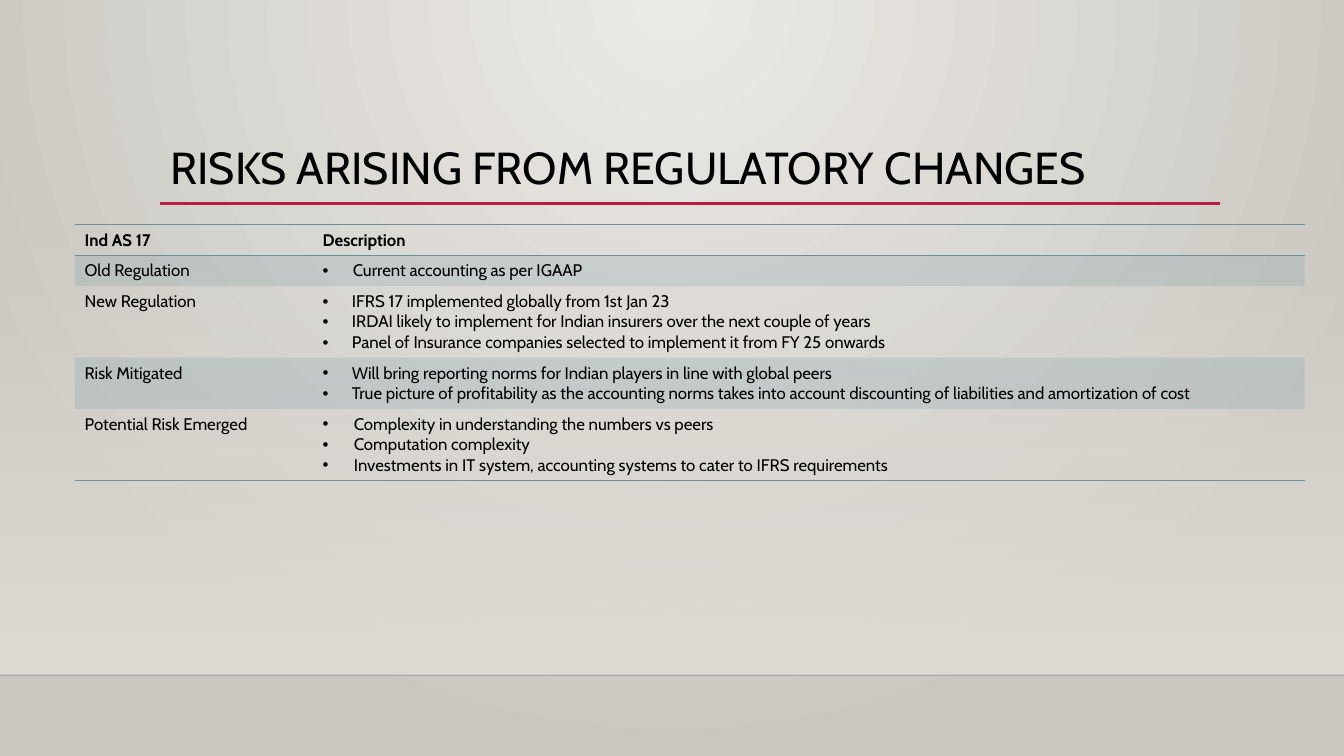
from lxml.etree import SubElement
from pptx import Presentation
from pptx.dml.color import RGBColor
from pptx.enum.shapes import MSO_CONNECTOR, MSO_SHAPE
from pptx.enum.text import MSO_ANCHOR, MSO_AUTO_SIZE, PP_ALIGN
from pptx.oxml import parse_xml
from pptx.oxml.ns import nsdecls, qn
from pptx.util import Pt

EMU_PER_PX = 9144  # 100 px to the inch
WIDTH, HEIGHT = 1333, 750
FLOOR_TOP = 670

ROWS = [
    ("Ind AS 17", ["Description"], 0),
    ("Old Regulation", ["Current accounting as per IGAAP"], 30),
    ("New Regulation", [
        "IFRS 17 implemented globally from 1st Jan 23",
        "IRDAI likely to implement for Indian insurers over the next couple of years",
        "Panel of Insurance companies selected to implement it from FY 25 onwards",
    ], 29),
    ("Risk Mitigated", [
        "Will bring reporting norms for Indian players in line with global peers",
        "True picture of profitability as the accounting norms takes into account "
        "discounting of liabilities and amortization of cost",
    ], 29),
    ("Potential Risk Emerged", [
        "Complexity in understanding the numbers vs peers",
        "Computation complexity",
        "Investments in IT system, accounting systems to cater to IFRS requirements",
    ], 31),
]


def px(length):
    return length * EMU_PER_PX


def rgb(color):
    return RGBColor.from_string(color)


def set_alpha(element, percent):
    """Give every colour inside the element the same opacity."""
    for color in list(element.iter(qn("a:srgbClr"))):
        SubElement(color, qn("a:alpha"), val=str(percent * 1000))


def set_gradient(fill, colors):
    fill.gradient()
    for stop, color in zip(fill.gradient_stops, colors):
        stop.color.rgb = rgb(color)


class RegulationSlide:
    font_name = "Cabin"
    ink = "000000"
    accent = "B71E42"
    table_color = "6892A0"

    def __init__(self, deck):
        self.page = deck.slides.add_slide(deck.slide_layouts[5])

    def background(self, inner, outer):
        """Radial gradient centred on the top edge."""
        set_gradient(self.page.background.fill, (inner, outer))
        linear = next(self.page.element.iter(qn("a:lin")))
        linear.getparent().replace(linear, parse_xml(
            f'<a:path {nsdecls("a")} path="circle">'
            '<a:fillToRect l="43000" t="0" r="43000" b="100000"/></a:path>'))

    def fading_wall(self, left, top, width, height, color):
        """Rectangle that fades in from clear at its top."""
        box = self.page.shapes.add_shape(
            MSO_SHAPE.RECTANGLE, px(left), px(top), px(width), px(height))
        box.shadow.inherit = False
        box.line.fill.background()
        set_gradient(box.fill, (color, color))
        box.fill.gradient_angle = 270
        set_alpha(next(box.element.iter(qn("a:gs"))), 0)

    def rule(self, left, right, y, color, weight, alpha=100):
        line = self.page.shapes.add_connector(
            MSO_CONNECTOR.STRAIGHT, px(left), px(y), px(right), px(y))
        line.line.color.rgb = rgb(color)
        line.line.width = Pt(weight)
        properties = line.element.spPr
        if alpha < 100:
            set_alpha(properties, alpha)
        SubElement(properties, qn("a:effectLst"))

    def style(self, para, size, bold=False):
        font = para.font
        font.name, font.size, font.bold = self.font_name, Pt(size), bold
        font.color.rgb = rgb(self.ink)

    def title(self, text, left, top, width, height):
        box = self.page.shapes.title
        box.left, box.top, box.width, box.height = map(px, (left, top, width, height))
        frame = box.text_frame
        frame.text = text
        frame.word_wrap = True
        frame.auto_size = MSO_AUTO_SIZE.NONE
        frame.vertical_anchor = MSO_ANCHOR.MIDDLE
        para = frame.paragraphs[0]
        para.alignment = PP_ALIGN.LEFT
        para.line_spacing = 0.9
        self.style(para, 32)

    def bullet(self, para, indent):
        properties = para._p.get_or_add_pPr()
        properties.set("marL", str(px(indent)))
        properties.set("indent", str(-px(indent)))
        SubElement(properties, qn("a:buFont"), typeface="Arial")
        SubElement(properties, qn("a:buChar"), char="•")

    def borders(self, cell, visible):
        """Draw the named sides and clear the others."""
        properties = cell._tc.get_or_add_tcPr()
        for position, side in enumerate("LRTB"):
            paint = (f'<a:solidFill><a:srgbClr val="{self.table_color}"/></a:solidFill>'
                     if side in visible else "<a:noFill/>")
            properties.insert(position, parse_xml(
                f'<a:ln{side} {nsdecls("a")} w="{Pt(1)}">{paint}</a:ln{side}>'))

    def cell(self, cell, lines, bold=False, indent=0, shaded=False, sides=""):
        cell.text = "\n".join(lines)
        for para in cell.text_frame.paragraphs:
            if indent:
                self.bullet(para, indent)
            if len(lines) > 1:
                para.alignment = PP_ALIGN.JUSTIFY
            self.style(para, 12, bold)
        if shaded:
            cell.fill.solid()
            cell.fill.fore_color.rgb = rgb(self.table_color)
            set_alpha(cell._tc.tcPr, 20)
        else:
            cell.fill.background()
        self.borders(cell, sides)

    def table(self, rows, left, top, widths):
        heights = [10 + 20 * len(lines) for _, lines, _ in rows]
        grid = self.page.shapes.add_table(
            len(rows), len(widths), px(left), px(top),
            px(sum(widths)), px(sum(heights))).table
        grid.first_row = grid.horz_banding = False
        for column, width in zip(grid.columns, widths):
            column.width = px(width)
        sides = {0: "TB", 1: "T", len(rows) - 1: "B"}
        for index, (label, lines, indent) in enumerate(rows):
            grid.rows[index].height = px(heights[index])
            look = dict(bold=index == 0, shaded=index % 2 == 1,
                        sides=sides.get(index, ""))
            self.cell(grid.cell(index, 0), [label], **look)
            self.cell(grid.cell(index, 1), lines, indent=indent, **look)


def main():
    deck = Presentation()
    deck.slide_width, deck.slide_height = px(WIDTH), px(HEIGHT)
    slide = RegulationSlide(deck)
    slide.background("ECEAE7", "CAC7C1")
    slide.fading_wall(0, 221, WIDTH, FLOOR_TOP - 221, "DFDBD5")
    slide.rule(0, WIDTH, FLOOR_TOP, "000001", 1, alpha=20)
    slide.rule(159, 1210, 202, slide.accent, 2.5)
    slide.title("RISKS ARISING FROM REGULATORY CHANGES", 159, 136, 1050, 66)
    slide.table(ROWS, 74, 223, (236, 984))
    deck.save("out.pptx")


if __name__ == "__main__":
    main()
